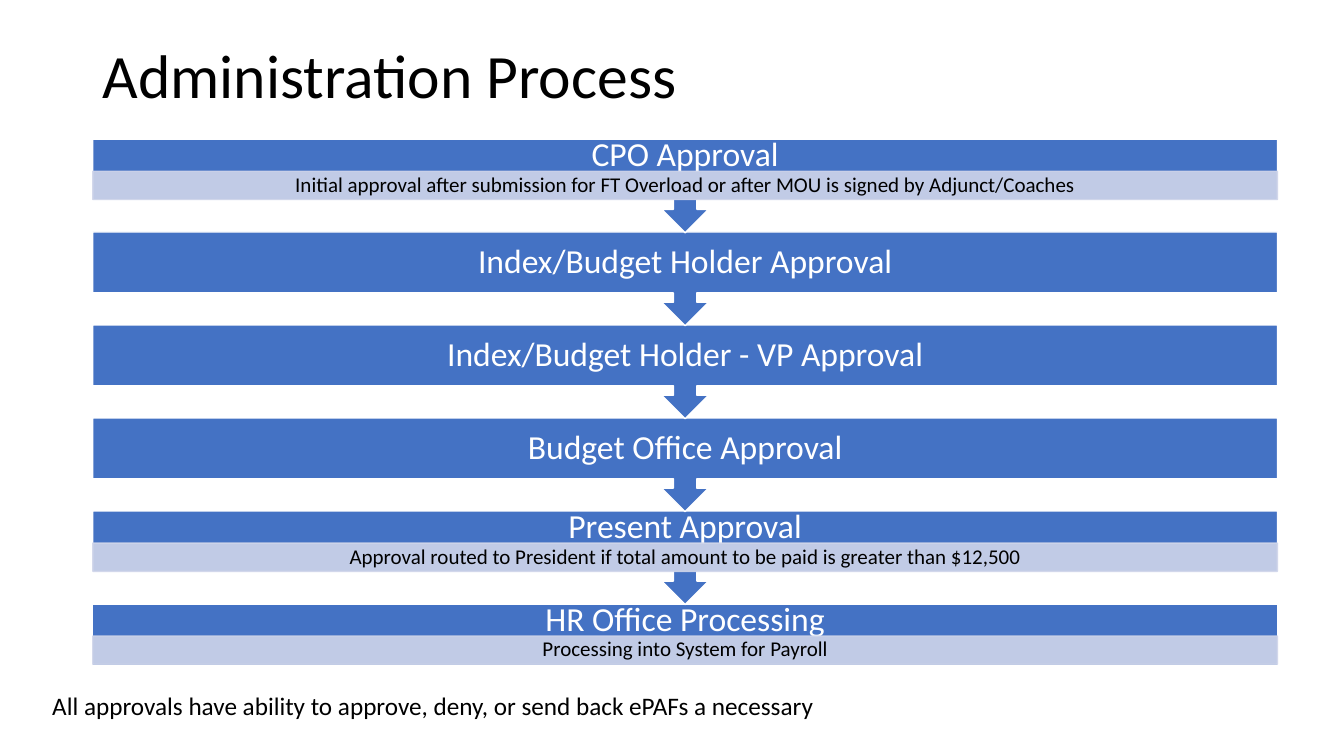
from dataclasses import dataclass

from pptx import Presentation
from pptx.dml.color import RGBColor
from pptx.enum.shapes import MSO_SHAPE as Preset
from pptx.enum.text import MSO_ANCHOR as Anchor, PP_ALIGN as Align
from pptx.oxml.ns import qn
from pptx.shapes.autoshape import Shape
from pptx.slide import Slide
from pptx.util import Inches, Pt
from lxml.etree import SubElement

BLUE = RGBColor(0x44, 0x72, 0xC4)
PALE = RGBColor(0xCF, 0xD5, 0xEA)
WHITE = RGBColor(0xFF, 0xFF, 0xFF)
BLACK = RGBColor(0x00, 0x00, 0x00)

LEFT, WIDTH = 0.92, 11.75
FIRST_TOP, STEP_PITCH = 1.38, 0.922
CALLOUT_HEIGHT, LAST_HEIGHT = 0.93, 0.61
DETAIL_OFFSET, DETAIL_HEIGHT = 0.32, 0.28


@dataclass
class Step:
    name: str
    detail: str = ""


STEPS = [
    Step("CPO Approval",
         "Initial approval after submission for FT Overload or after MOU is signed by Adjunct/Coaches"),
    Step("Index/Budget Holder Approval"),
    Step("Index/Budget Holder - VP Approval"),
    Step("Budget Office Approval"),
    Step("Present Approval",
         "Approval routed to President if total amount to be paid is greater than $12,500"),
    Step("HR Office Processing", "Processing into System for Payroll"),
]


def write(box: Shape, text: str, size: float, color: RGBColor,
          align: Align = Align.LEFT, spacing: float = 1.0) -> None:
    box.text_frame.word_wrap = True
    para = box.text_frame.paragraphs[0]
    para.text = text
    para.alignment = align
    para.line_spacing = spacing
    para.font.name = "Calibri"
    para.font.size = Pt(size)
    para.font.color.rgb = color


def add_text(page: Slide, left: float, top: float, width: float, height: float,
             text: str, size: float, spacing: float = 1.0) -> None:
    box = page.shapes.add_textbox(Inches(left), Inches(top), Inches(width), Inches(height))
    write(box, text, size, BLACK, spacing=spacing)


def add_bar(page: Slide, preset: Preset, top: float, height: float, fill: RGBColor,
            line: RGBColor, text: str, size: float, color: RGBColor,
            bottom_inset: float = 0) -> Shape:
    bar = page.shapes.add_shape(preset, Inches(LEFT), Inches(top), Inches(WIDTH), Inches(height))
    bar.shadow.inherit = False
    bar.fill.solid()
    bar.fill.fore_color.rgb = fill
    bar.line.color.rgb = line
    bar.line.width = Pt(1)
    frame = bar.text_frame
    frame.margin_top = 0
    frame.margin_bottom = Inches(bottom_inset)
    frame.vertical_anchor = Anchor.MIDDLE
    write(bar, text, size, color, Align.CENTER, 0.9)
    return bar


def make_translucent(bar: Shape, percent: int) -> None:
    """Set the opacity of fill and line."""
    properties = bar.fill._xPr
    for color in properties.iter(qn("a:srgbClr")):
        SubElement(color, qn("a:alpha"), val=str(percent * 1000))


def add_step(page: Slide, step: Step, top: float, is_last: bool) -> None:
    preset = Preset.RECTANGLE if is_last else Preset.DOWN_ARROW_CALLOUT
    height = LAST_HEIGHT if is_last else CALLOUT_HEIGHT
    inset = DETAIL_HEIGHT if step.detail else 0
    add_bar(page, preset, top, height, BLUE, WHITE, step.name, 24, WHITE, inset)
    if step.detail:
        detail = add_bar(page, Preset.RECTANGLE, top + DETAIL_OFFSET, DETAIL_HEIGHT,
                         PALE, PALE, step.detail, 15, BLACK)
        make_translucent(detail, 90)


def main() -> None:
    deck = Presentation()
    deck.slide_width, deck.slide_height = Inches(13.33), Inches(7.5)
    page = deck.slides.add_slide(deck.slide_layouts[6])
    add_text(page, LEFT, 0.4, 11.5, 0.9, "Administration Process", 44, 0.9)
    for index, step in reversed(list(enumerate(STEPS))):
        add_step(page, step, FIRST_TOP + index * STEP_PITCH, index == len(STEPS) - 1)
    add_text(page, 0.42, 6.8, 8.26, 0.4,
             "All approvals have ability to approve, deny, or send back ePAFs a necessary", 18)
    deck.save("out.pptx")


if __name__ == "__main__":
    main()
